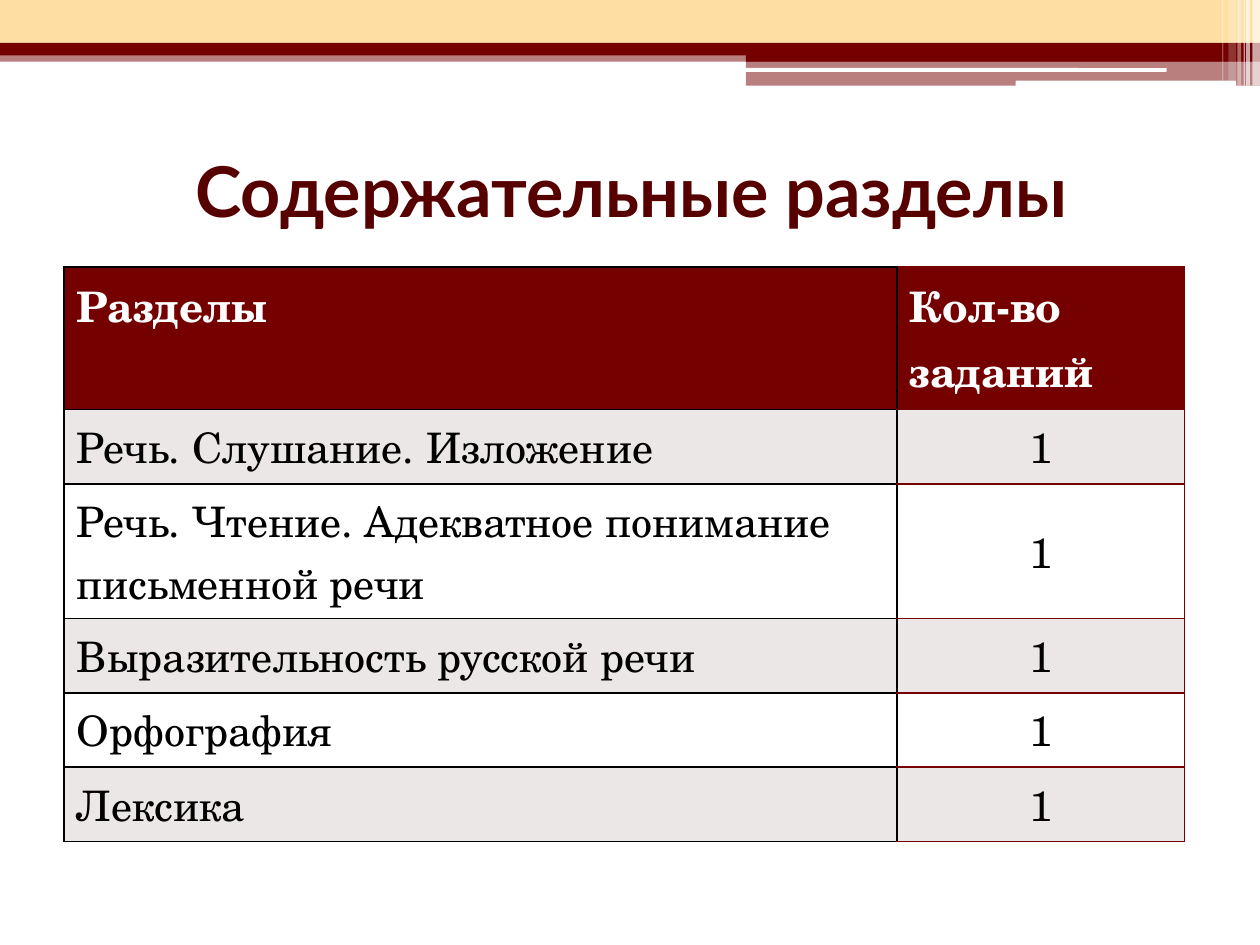
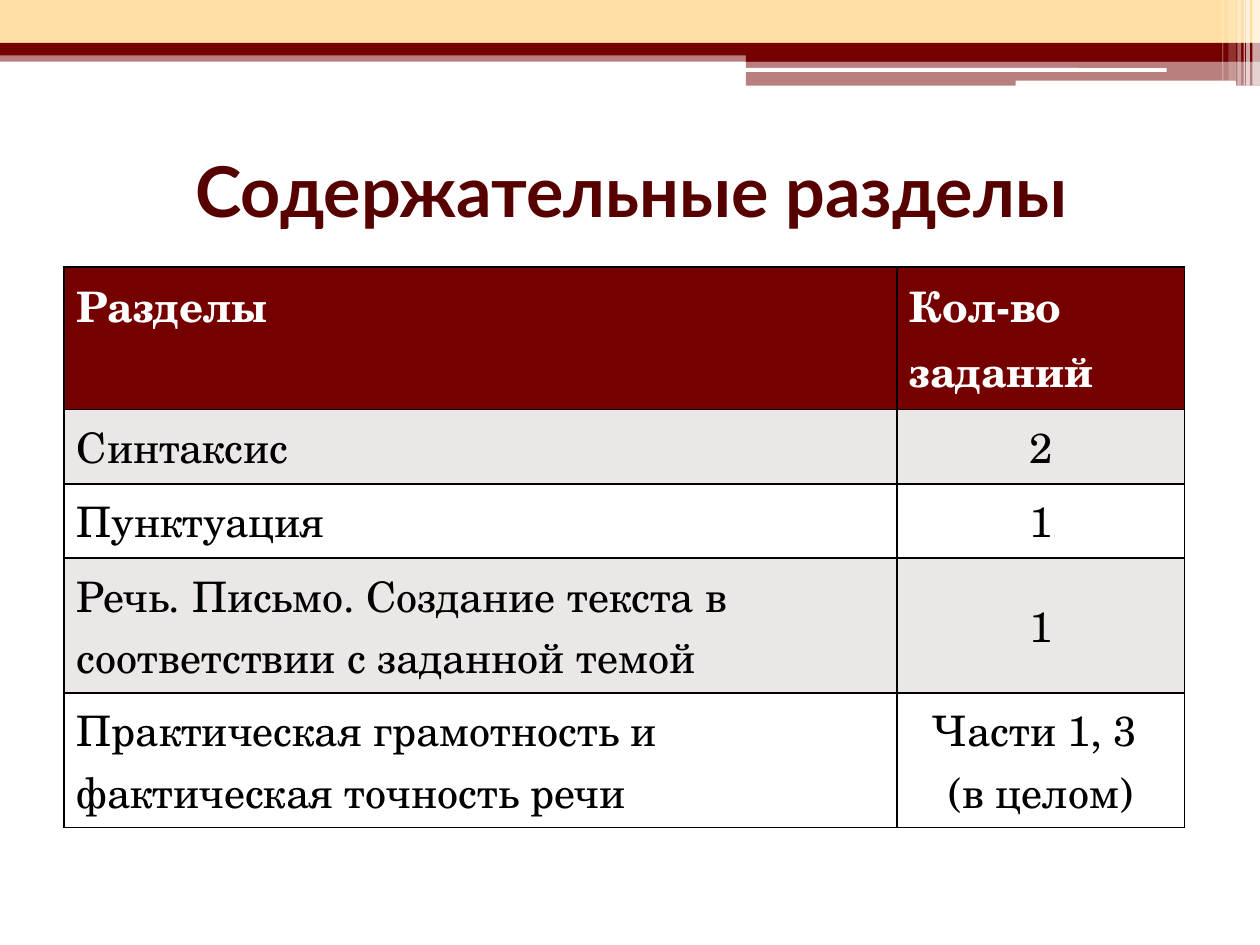
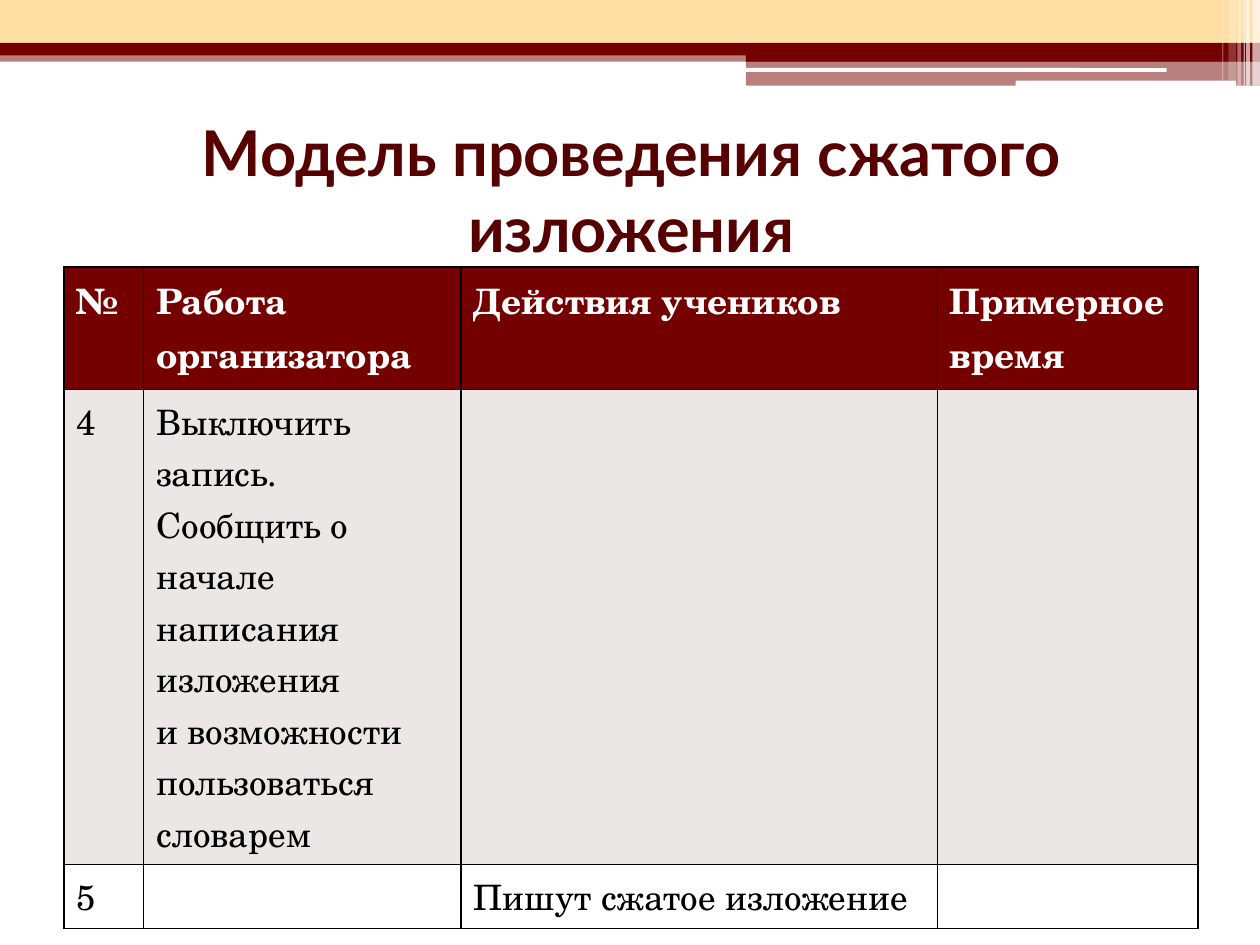
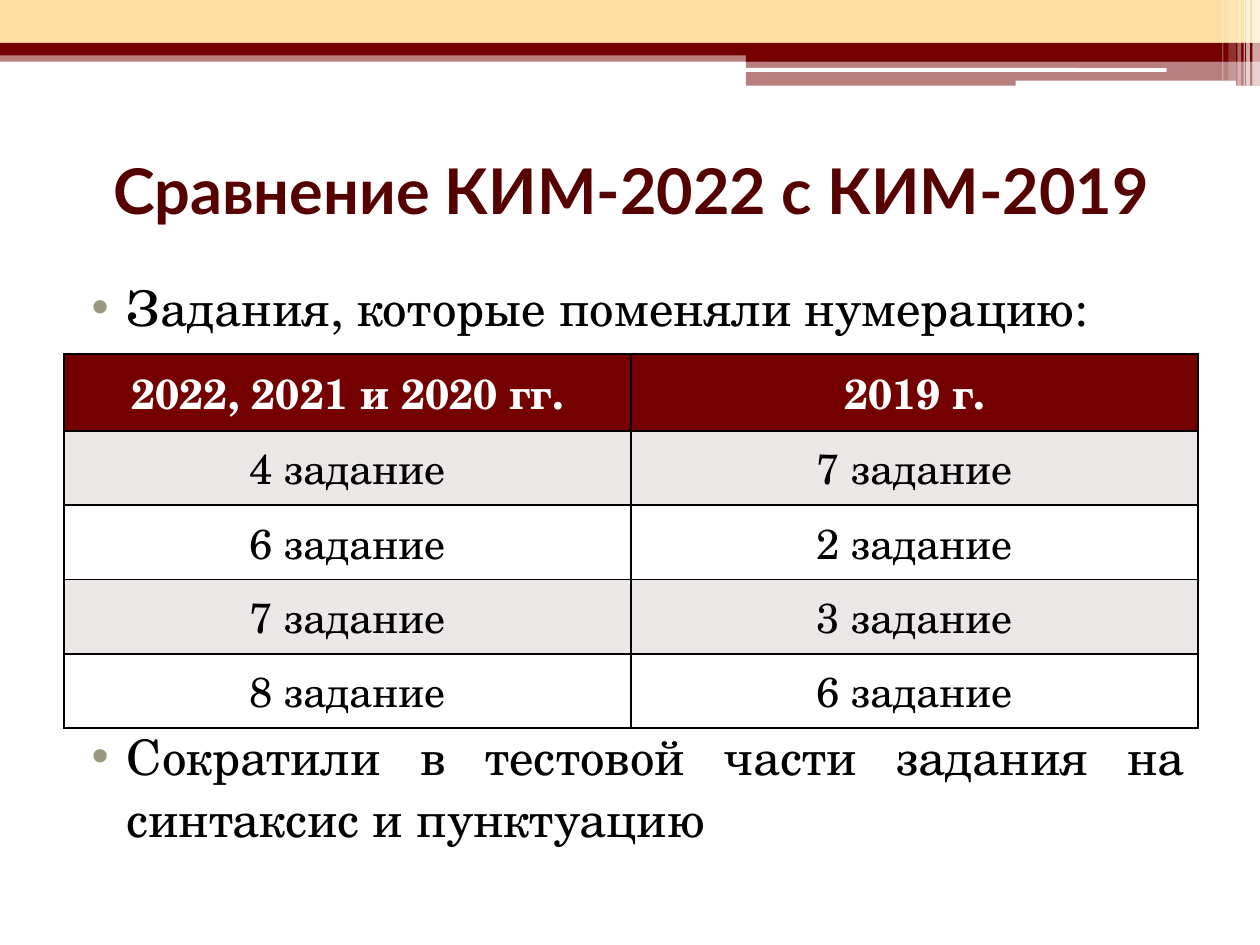
from lxml.etree import SubElement
from pptx import Presentation
from pptx.dml.color import RGBColor
from pptx.enum.shapes import MSO_SHAPE as Shape
from pptx.enum.text import MSO_ANCHOR as Anchor, PP_ALIGN as Align
from pptx.oxml import parse_xml
from pptx.oxml.ns import nsdecls, qn
from pptx.util import Inches, Pt

GRID_COLUMNS, GRID_ROWS = 10, 7.5
SLIDE_WIDTH, SLIDE_HEIGHT = Inches(10), Inches(7.5)
MARGIN, CONTENT_WIDTH, CONTENT_TOP = 0.51, 9, 2.12
HEADER_ROW, ONE_LINE, TWO_LINES = 1.13, 0.59, 1.07

MAROON, DARK_MAROON, CREAM = "740000", "570000", "FFDEA4"
WHITE, BLACK, STRIPE, BULLET = "FFFFFF", "000000", "EBE7E7", "99987F"
TITLE_FONT, BODY_FONT = "Lato", "TeX Gyre Schola"

BANDS = [
    (0, 0.4, 10, 0.09, MAROON, 50),
    (0, 0, 10, 0.34, CREAM, 100),
    (0, 0.34, 10, 0.1, MAROON, 100),
    (5.92, 0.39, 4.08, 0.1, MAROON, 100),
    (5.92, 0.48, 4.08, 0.2, MAROON, 50),
]
WHITE_BARS = [(5.91, 0.54, 3.35, 0.03), (8.06, 0.64, 1.75, 0.05)]
GLASS_STRIPES = [
    (9.94, 0.06, 0.68, 65),
    (9.89, 0.03, 0.68, 65),
    (9.87, 0.01, 0.68, 60),
    (9.82, 0.03, 0.68, 40),
    (9.75, 0.06, 0.64, 20),
    (9.7, 0.01, 0.64, 30),
]

SECTIONS_TITLE = "Содержательные разделы"
SECTIONS_HEADER = ["Разделы", "Кол-во\nзаданий"]
SECTIONS_COLUMNS = [6.61, 2.28]
SECTIONS_START = [
    SECTIONS_HEADER,
    ["Речь. Слушание. Изложение", "1"],
    ["Речь. Чтение. Адекватное понимание письменной речи", "1"],
    ["Выразительность русской речи", "1"],
    ["Орфография", "1"],
    ["Лексика", "1"],
]
SECTIONS_END = [
    SECTIONS_HEADER,
    ["Синтаксис", "2"],
    ["Пунктуация", "1"],
    ["Речь. Письмо. Создание текста в соответствии с заданной темой", "1"],
    ["Практическая грамотность и фактическая точность речи",
     "Части 1, 3 \n(в целом)"],
]
SUMMARY_STEPS = [
    ["№", "Работа организатора", "Действия учеников", "Примерное время"],
    ["4", "Выключить запись.\nСообщить о начале\nнаписания изложения\n"
          "и возможности пользоваться\nсловарем", "", ""],
    ["5", "", "Пишут сжатое изложение", ""],
]
TASK_NUMBERS = [(4, 7), (6, 2), (7, 3), (8, 6)]
RENUMBERED = [["2022, 2021 и 2020 гг.", "2019 г."]] + [
    [f"{number} задание" for number in pair] for pair in TASK_NUMBERS
]


def color(value):
    return RGBColor.from_string(value)


def across(columns):
    return round(SLIDE_WIDTH * columns / GRID_COLUMNS)


def down(rows):
    return round(SLIDE_HEIGHT * rows / GRID_ROWS)


def place(left, top, width, height):
    return across(left), down(top), across(width), down(height)


def apply_format(target, values):
    for name, value in values.items():
        setattr(target, name, value)


def font_format(paragraph, name, size, font_color, bold=False):
    apply_format(paragraph.font, {"name": name, "size": Pt(size), "bold": bold})
    paragraph.font.color.rgb = color(font_color)


def add_band(slide, area, fill, opacity=100, kind=Shape.RECTANGLE):
    shape = slide.shapes.add_shape(kind, *place(*area))
    shape.shadow.inherit = False
    shape.line.fill.background()
    shape.fill.solid()
    shape.fill.fore_color.rgb = color(fill)
    if opacity < 100:
        fill_color = shape.fill._xPr.find(qn("a:solidFill"))[0]
        SubElement(fill_color, qn("a:alpha"), val=str(opacity * 1000))


def add_text_frame(slide, area, anchor):
    frame = slide.shapes.add_textbox(*place(*area)).text_frame
    apply_format(frame, {"word_wrap": True, "vertical_anchor": anchor})
    return frame


def add_title(slide, text, size):
    frame = add_text_frame(slide, (MARGIN, 0.92, CONTENT_WIDTH, 1.17), Anchor.MIDDLE)
    paragraph = frame.paragraphs[0]
    paragraph.text = text
    paragraph.alignment = Align.CENTER
    font_format(paragraph, TITLE_FONT, size, DARK_MAROON, True)


def add_titled_slide(presentation, title, size):
    slide = presentation.slides.add_slide(presentation.slide_layouts[6])
    for *area, fill, opacity in BANDS:
        add_band(slide, area, fill, opacity)
    for area in WHITE_BARS:
        add_band(slide, area, WHITE, kind=Shape.ROUNDED_RECTANGLE)
    for left, width, height, opacity in GLASS_STRIPES:
        add_band(slide, (left, 0, width, height), WHITE, opacity)
    add_title(slide, title, size)
    return slide


def set_borders(cell, side_colors):
    properties = cell._tc.get_or_add_tcPr()
    for position, (side, line_color) in enumerate(zip("LRTB", side_colors)):
        properties.insert(position, parse_xml(
            f'<a:ln{side} {nsdecls("a")} w="12700"><a:solidFill>'
            f'<a:srgbClr val="{line_color}"/></a:solidFill></a:ln{side}>'))


def format_cell(cell, text, row, size, centred):
    cell.text = text
    cell.fill.solid()
    cell.fill.fore_color.rgb = color(
        MAROON if row == 0 else STRIPE if row % 2 else WHITE)
    cell.vertical_anchor = Anchor.MIDDLE if centred else Anchor.TOP
    for paragraph in cell.text_frame.paragraphs:
        paragraph.alignment = Align.CENTER if centred else Align.LEFT
        font_format(paragraph, BODY_FONT, size, BLACK if row else WHITE, row == 0)


def add_grid_table(slide, content, columns, rows, size=24, top=CONTENT_TOP,
                   centred_from=None, red_column=None):
    area = place(MARGIN, top, sum(columns), sum(rows))
    table = slide.shapes.add_table(len(rows), len(columns), *area).table
    table.horz_banding = False
    for column, width in zip(table.columns, columns):
        column.width = across(width)
    for row, (texts, height) in enumerate(zip(content, rows)):
        table.rows[row].height = down(height)
        for column, text in enumerate(texts):
            cell = table.cell(row, column)
            centred = centred_from is not None and (
                row >= centred_from[0] and column >= centred_from[1])
            format_cell(cell, text, row, size, centred)
            other_sides = MAROON if column == red_column else BLACK
            set_borders(cell, [BLACK] + [other_sides] * 3)


def add_bullets(slide, area, items):
    frame = add_text_frame(slide, area, Anchor.TOP)
    for index, (text, space_before) in enumerate(items):
        paragraph = frame.paragraphs[0] if index == 0 else frame.add_paragraph()
        paragraph.text = text
        properties = paragraph._p.get_or_add_pPr()
        properties.set("marL", str(across(0.4)))
        properties.set("indent", str(-across(0.28)))
        bullet_color = SubElement(properties, qn("a:buClr"))
        SubElement(bullet_color, qn("a:srgbClr"), val=BULLET)
        SubElement(properties, qn("a:buFont"), typeface="Arial")
        SubElement(properties, qn("a:buChar"), char="•")
        apply_format(paragraph, {
            "alignment": Align.JUSTIFY,
            "line_spacing": Pt(35.4),
            "space_before": Pt(space_before),
        })
        font_format(paragraph, BODY_FONT, 28, BLACK)


def main():
    presentation = Presentation()
    apply_format(presentation, {
        "slide_width": SLIDE_WIDTH, "slide_height": SLIDE_HEIGHT})

    slide = add_titled_slide(presentation, SECTIONS_TITLE, 40)
    add_grid_table(slide, SECTIONS_START, SECTIONS_COLUMNS,
                   [HEADER_ROW, ONE_LINE, TWO_LINES] + [ONE_LINE] * 3,
                   centred_from=(1, 1), red_column=1)

    slide = add_titled_slide(presentation, SECTIONS_TITLE, 40)
    add_grid_table(slide, SECTIONS_END, SECTIONS_COLUMNS,
                   [HEADER_ROW] + [ONE_LINE] * 2 + [TWO_LINES] * 2,
                   centred_from=(1, 1))

    slide = add_titled_slide(presentation, "Модель проведения сжатого изложения", 36)
    add_grid_table(slide, SUMMARY_STEPS, [0.63, 2.52, 3.78, 2.07],
                   [0.97, 3.77, 0.51], size=20)

    slide = add_titled_slide(presentation, "Сравнение КИМ-2022 с КИМ-2019", 36)
    add_bullets(slide, (MARGIN, 2.13, CONTENT_WIDTH, 4.73), [
        ("Задания, которые поменяли нумерацию:", 0),
        ("Сократили в тестовой части задания на синтаксис и пунктуацию", 221),
    ])
    add_grid_table(slide, RENUMBERED, [CONTENT_WIDTH / 2] * 2,
                   [0.61] + [ONE_LINE] * len(TASK_NUMBERS),
                   top=2.81, centred_from=(0, 0))

    presentation.save("out.pptx")


if __name__ == "__main__":
    main()
